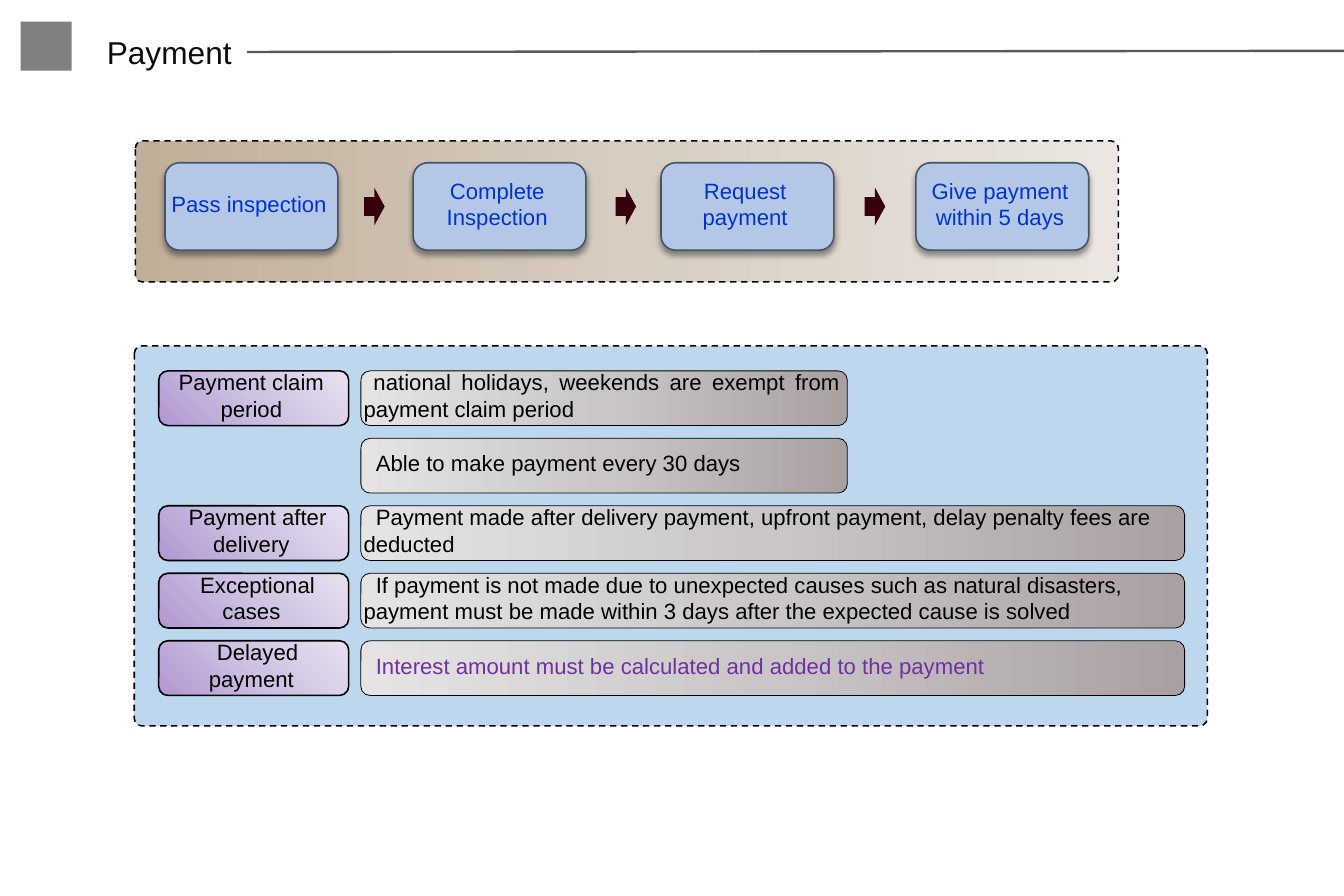
from copy import deepcopy

from lxml import etree
from pptx import Presentation
from pptx.dml.color import RGBColor
from pptx.enum.dml import MSO_LINE
from pptx.enum.shapes import MSO_CONNECTOR, MSO_SHAPE as SHAPE
from pptx.enum.text import MSO_ANCHOR, MSO_AUTO_SIZE, PP_ALIGN as ALIGN
from pptx.oxml.ns import qn
from pptx.util import Pt

BLACK = RGBColor(0x00, 0x00, 0x00)
TITLE_INK = RGBColor(0x0D, 0x0D, 0x0D)
GREY = RGBColor(0x80, 0x80, 0x80)
RULE = RGBColor(0x59, 0x59, 0x59)
STEP_FILL = RGBColor(0xB4, 0xC7, 0xE7)
STEP_LINE = RGBColor(0x44, 0x54, 0x6A)
STEP_INK = RGBColor(0x00, 0x33, 0xCC)
ARROW = RGBColor(0x36, 0x00, 0x0C)
TERMS_FILL = RGBColor(0xBD, 0xD7, 0xEE)
PURPLE = RGBColor(0x70, 0x30, 0xA0)
BEIGES = [RGBColor(0xC0, 0xAE, 0x98), RGBColor(0xD7, 0xCD, 0xC1), RGBColor(0xEB, 0xE6, 0xE1)]
LILACS = [RGBColor(0xB1, 0x97, 0xD2), RGBColor(0xCE, 0xC1, 0xE2), RGBColor(0xE7, 0xE1, 0xF0)]
SILVERS = [RGBColor(0xA9, 0xA0, 0xA2), RGBColor(0xCA, 0xC6, 0xC7), RGBColor(0xE5, 0xE3, 0xE3)]

FONT = "Arial"
WIDTH, HEIGHT = 850.5, 567

# Text and left offset inside the panel
STEPS = [
    ("Pass inspection", 18.7),
    ("Complete Inspection", 175.7),
    ("Request payment", 332.6),
    ("Give payment within 5 days", 493.9),
]
ARROW_OFFSETS = [144.7, 303.8, 461.5]

# Label, label indent, detail, detail indent, detail width, alignment, ink
TERMS = [
    ("Payment claim period", 0, "national holidays, weekends are exempt from payment claim period",
     6.3, 307.8, ALIGN.JUSTIFY, BLACK),
    (None, 0, "Able to make payment every 30 days", 7.8, 307.8, ALIGN.JUSTIFY, BLACK),
    ("Payment after delivery", 7.8,
     "Payment made after delivery payment, upfront payment, delay penalty fees are deducted",
     7.8, 521.3, ALIGN.LEFT, BLACK),
    ("Exceptional cases", 7.8,
     "If payment is not made due to unexpected causes such as natural disasters, "
     "payment must be made within 3 days after the expected cause is solved",
     7.8, 521.3, ALIGN.LEFT, BLACK),
    ("Delayed payment", 7.8, "Interest amount must be calculated and added to the payment",
     7.8, 521.3, ALIGN.LEFT, PURPLE),
]


def fill_gradient(shape, colours, angle):
    """Fill with three evenly spaced stops; the angle runs counter-clockwise."""
    shape.fill.gradient()
    stop_list = shape.element.spPr.find(".//" + qn("a:gsLst"))
    stop_list.append(deepcopy(stop_list[0]))
    for index, (stop, colour) in enumerate(zip(shape.fill.gradient_stops, colours)):
        stop.position = index / 2
        stop.color.rgb = colour
    shape.fill.gradient_angle = angle


def add_block(slide, kind, box, fill, angle=0, line=None, line_width=1.0):
    """Add a shape filled with one colour or a list of gradient colours."""
    shape = slide.shapes.add_shape(kind, *map(Pt, box))
    shape.shadow.inherit = False
    if isinstance(fill, list):
        fill_gradient(shape, fill, angle)
    else:
        shape.fill.solid()
        shape.fill.fore_color.rgb = fill
    if line is None:
        shape.line.fill.background()
    else:
        shape.line.color.rgb = line
        shape.line.width = Pt(line_width)
    return shape


def write_text(shape, text, ink, size=14, alignment=ALIGN.CENTER, indent=0,
               insets=(0, 3.6, 2.9, 7.2)):
    frame = shape.text_frame
    frame.text = text
    frame.word_wrap = True
    frame.vertical_anchor = MSO_ANCHOR.MIDDLE
    frame.margin_left, frame.margin_top, frame.margin_right, frame.margin_bottom = map(Pt, insets)
    paragraph = frame.paragraphs[0]
    paragraph.alignment = alignment
    if indent:
        properties = paragraph._p.get_or_add_pPr()
        properties.set("marL", "0")
        properties.set("indent", str(Pt(indent)))
    font = paragraph.runs[0].font
    font.name = FONT
    font.size = Pt(size)
    font.color.rgb = ink


def add_drop_shadow(shape):
    effects = shape.element.spPr.find(qn("a:effectLst"))
    shadow = etree.SubElement(effects, qn("a:outerShdw"), blurRad=str(Pt(4)), dist=str(Pt(3)),
                              dir="5400000", algn="t", rotWithShape="0")
    colour = etree.SubElement(shadow, qn("a:srgbClr"), val=str(BLACK))
    etree.SubElement(colour, qn("a:alpha"), val="40000")


def add_panel(slide, box, fill, corner):
    panel = add_block(slide, SHAPE.ROUNDED_RECTANGLE, box, fill, line=BLACK)
    panel.adjustments[0] = corner
    panel.line.dash_style = MSO_LINE.DASH


def add_header(slide, left, top, right):
    add_block(slide, SHAPE.RECTANGLE, (left, top, 32.4, 31), GREY)
    title = slide.shapes.add_textbox(Pt(left + 46), Pt(top + 2.9), Pt(97.2), Pt(33.1))
    write_text(title, "Payment", TITLE_INK, 20, ALIGN.LEFT, insets=(8.6, 4.3, 8.6, 4.3))
    title.text_frame.vertical_anchor = MSO_ANCHOR.TOP
    title.text_frame.word_wrap = False
    title.text_frame.auto_size = MSO_AUTO_SIZE.SHAPE_TO_FIT_TEXT
    rule = slide.shapes.add_connector(MSO_CONNECTOR.STRAIGHT, Pt(left + 143.2), Pt(top + 19.2),
                                      Pt(right), Pt(top + 18.5))
    rule.line.color.rgb = RULE
    rule.line.width = Pt(1.5)
    etree.SubElement(rule._element.spPr, qn("a:effectLst"))


def add_process(slide, left, top, width, height):
    add_panel(slide, (left, top, width, height), BEIGES, 0.05)
    for text, offset in STEPS:
        step = add_block(slide, SHAPE.ROUNDED_RECTANGLE, (left + offset, top + 13.8, 109.4, 55.3),
                         STEP_FILL, line=STEP_LINE)
        add_drop_shadow(step)
        write_text(step, text, STEP_INK)
    for offset in ARROW_OFFSETS:
        add_block(slide, SHAPE.RIGHT_ARROW, (left + offset, top + 29.6, 13, 23.8), ARROW)


def add_terms(slide, left, top, width, height):
    add_panel(slide, (left, top, width, height), TERMS_FILL, 0.02)
    row_height, pitch = 34.6, 42.7
    for row, (label, label_indent, detail, indent, detail_width, alignment, ink) in enumerate(TERMS):
        row_top = top + 15.8 + row * pitch
        if label:
            label_box = add_block(slide, SHAPE.ROUNDED_RECTANGLE,
                                  (left + 15.5, row_top, 120.2, row_height), LILACS, 45, BLACK)
            write_text(label_box, label, BLACK, indent=label_indent)
        detail_box = add_block(slide, SHAPE.ROUNDED_RECTANGLE,
                               (left + 143.4, row_top, detail_width, row_height),
                               SILVERS, 180, BLACK, 0.5)
        write_text(detail_box, detail, ink, alignment=alignment, indent=indent)


def main():
    presentation = Presentation()
    presentation.slide_width = Pt(WIDTH)
    presentation.slide_height = Pt(HEIGHT)
    slide = presentation.slides.add_slide(presentation.slide_layouts[6])
    add_header(slide, 13, 13.7, WIDTH)
    add_process(slide, 85.7, 89.2, 622.1, 89.2)
    add_terms(slide, 85, 218.9, 679, 240.5)
    presentation.save("out.pptx")


if __name__ == "__main__":
    main()
